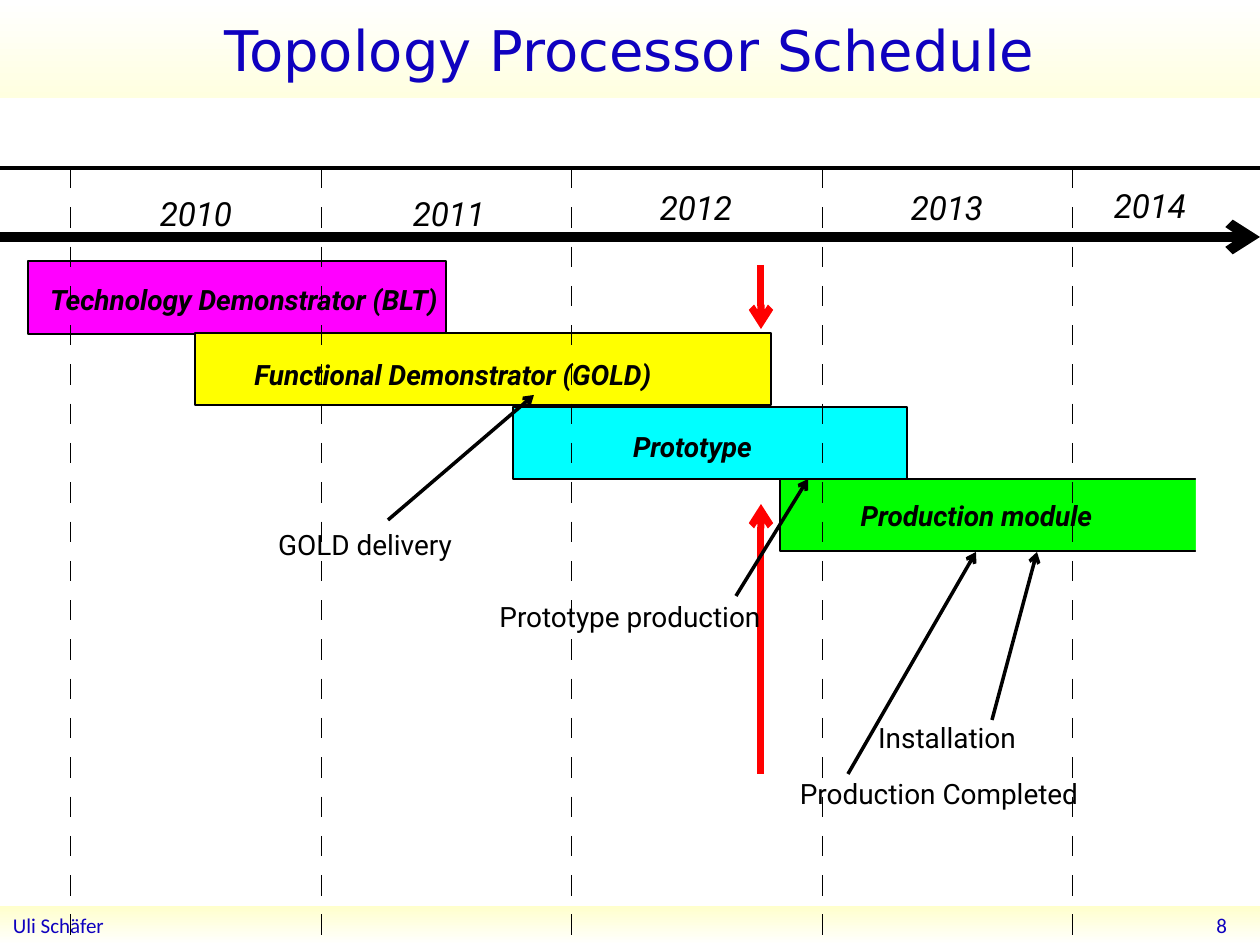
import dataclasses

import lxml.etree
import pptx
import pptx.dml.color
import pptx.enum.shapes
import pptx.enum.text
import pptx.oxml.ns
import pptx.util

ALIGN = pptx.enum.text.PP_ALIGN


@dataclasses.dataclass(frozen=True)
class Theme:
    """Colours, fonts and type sizes of the slide."""
    ink: str = "000000"
    paper: str = "FFFFFF"
    heading: str = "0F01BF"
    header_tint: str = "FFFFE0"
    footer_tint: str = "FFFFCC"
    marker: str = "FF0000"
    technology: str = "FF00FF"
    functional: str = "FFFF00"
    prototype: str = "00FFFF"
    production: str = "00FF00"
    title_font: str = "DejaVu Sans"
    footer_font: str = "Calibri"
    body_font: str = "Roboto"
    title_size: int = 32
    year_size: int = 19
    label_size: int = 16
    footer_size: int = 12


THEME = Theme()


def px(length):
    """Turn pixels into EMU at 126 pixels to the inch."""
    return pptx.util.Emu(round(length * 914400 / 126))


def colour(code):
    """Return the RGB colour for a hexadecimal code."""
    return pptx.dml.color.RGBColor.from_string(code)


def write(shape, text, font=THEME.body_font, size=THEME.label_size, ink=THEME.ink,
          bold=False, italic=False, align=ALIGN.CENTER, inset=0):
    """Write one middle-anchored paragraph into a shape."""
    frame = shape.text_frame
    frame.word_wrap = True
    frame.vertical_anchor = pptx.enum.text.MSO_ANCHOR.MIDDLE
    frame.margin_left = frame.margin_right = px(inset)
    frame.margin_top = frame.margin_bottom = 0
    para = frame.paragraphs[0]
    para.alignment = align
    span = para.add_run()
    span.text = text
    span.font.name = font
    span.font.size = pptx.util.Pt(size)
    span.font.bold = bold
    span.font.italic = italic
    span.font.color.rgb = colour(ink)


def add_label(page, box, text, **style):
    """Add a text box with the given format."""
    write(page.shapes.add_textbox(*map(px, box)), text, **style)


def add_box(page, box, fill, outline=None):
    """Add a plain rectangle, with a hairline if an outline is given."""
    shape = page.shapes.add_shape(
        pptx.enum.shapes.MSO_SHAPE.RECTANGLE, *map(px, box))
    shape.shadow.inherit = False
    shape.fill.solid()
    shape.fill.fore_color.rgb = colour(fill)
    if outline:
        shape.line.color.rgb = colour(outline)
        shape.line.width = 0
    else:
        shape.line.fill.background()
    return shape


def add_band(page, box, tint, angle):
    """Add a rectangle that fades from a tint to the paper colour."""
    shape = add_box(page, box, tint)
    shape.fill.gradient()
    shape.fill.gradient_angle = angle
    for stop, code in zip(shape.fill.gradient_stops, (tint, THEME.paper)):
        stop.color.rgb = colour(code)
    return shape


def add_line(page, start, end, ink=THEME.ink, width=0, arrow=False, dashed=False):
    """Add a straight line, optionally dashed or with an arrowhead."""
    line = page.shapes.add_connector(
        pptx.enum.shapes.MSO_CONNECTOR.STRAIGHT, *map(px, start + end))
    line.line.color.rgb = colour(ink)
    line.line.width = pptx.util.Pt(width)
    qn = pptx.oxml.ns.qn
    properties = line.line._get_or_add_ln()
    if dashed:
        dash = lxml.etree.SubElement(properties, qn("a:custDash"))
        lxml.etree.SubElement(dash, qn("a:ds"), d="2280000", sp="2120000")
    if arrow:
        lxml.etree.SubElement(properties, qn("a:tailEnd"), type="arrow")
    lxml.etree.SubElement(properties.getparent(), qn("a:effectLst"))


def add_frame(page):
    """Add the title band, the footer band and the page number."""
    header = add_band(page, (0, 0, 1260, 98), THEME.header_tint, 90)
    write(header, "Topology Processor Schedule", font=THEME.title_font,
          size=THEME.title_size, ink=THEME.heading)
    small = dict(font=THEME.footer_font, size=THEME.footer_size,
                 ink=THEME.heading, inset=13)
    footer = add_band(page, (0, 906, 1260, 39), THEME.footer_tint, 270)
    write(footer, "Uli Schäfer", align=ALIGN.LEFT, **small)
    add_label(page, (974, 905, 266, 40), "8", align=ALIGN.RIGHT, **small)


def add_timeline(page):
    """Add the time axis, the year names and the dashed year limits."""
    add_line(page, (0, 237), (1260, 237), width=5.67, arrow=True)
    years = (("2010", 196, 213), ("2011", 449, 213), ("2012", 696, 207),
             ("2013", 947, 207), ("2014", 1150, 205))
    for index, (year, center, middle) in enumerate(years):
        add_label(page, (center - 94, middle - 37, 188, 74), year,
                  size=THEME.year_size, italic=True)
        limit = round(70.5 + 250.4 * index)
        add_line(page, (limit, 168), (limit, 945), width=0.5, dashed=True)
    add_line(page, (0, 168), (1260, 168))


def main():
    """Build the schedule slide and save it."""
    deck = pptx.Presentation()
    deck.slide_width, deck.slide_height = px(1260), px(945)
    page = deck.slides.add_slide(deck.slide_layouts[6])

    add_line(page, (761, 774), (761, 504), ink=THEME.marker, width=4, arrow=True)
    add_frame(page)
    phases = (
        ("Technology Demonstrator (BLT)", THEME.technology,
         (28, 261, 418, 73), (33, 249, 422, 101)),
        ("Functional Demonstrator (GOLD)", THEME.functional,
         (195, 333, 576, 72), (242, 324, 422, 101)),
        ("Prototype", THEME.prototype,
         (513, 407, 394, 72), (578, 396, 229, 101)),
        ("Production module", THEME.production,
         (780, 479, 435, 72), (822, 465, 309, 101)),
    )
    for name, fill, bar, place in phases:
        add_box(page, bar, fill, outline=THEME.ink)
    add_timeline(page)
    for name, fill, bar, place in phases:
        add_label(page, place, name, bold=True, italic=True)

    milestones = (
        ("Installation", (736, 687), (992, 720), (1037, 552)),
        ("GOLD delivery", (154, 494), (388, 520), (534, 395)),
        ("Prototype production", (419, 566), (736, 596), (808, 479)),
        ("Production Completed", (728, 743), (848, 774), (976, 552)),
    )
    for name, corner, start, end in milestones:
        add_label(page, corner + (422, 101), name)
        add_line(page, start, end, arrow=True)
    add_box(page, (1196, 454, 39, 140), THEME.paper)
    add_line(page, (761, 265), (761, 329), ink=THEME.marker, width=4, arrow=True)
    deck.save("out.pptx")


if __name__ == "__main__":
    main()
